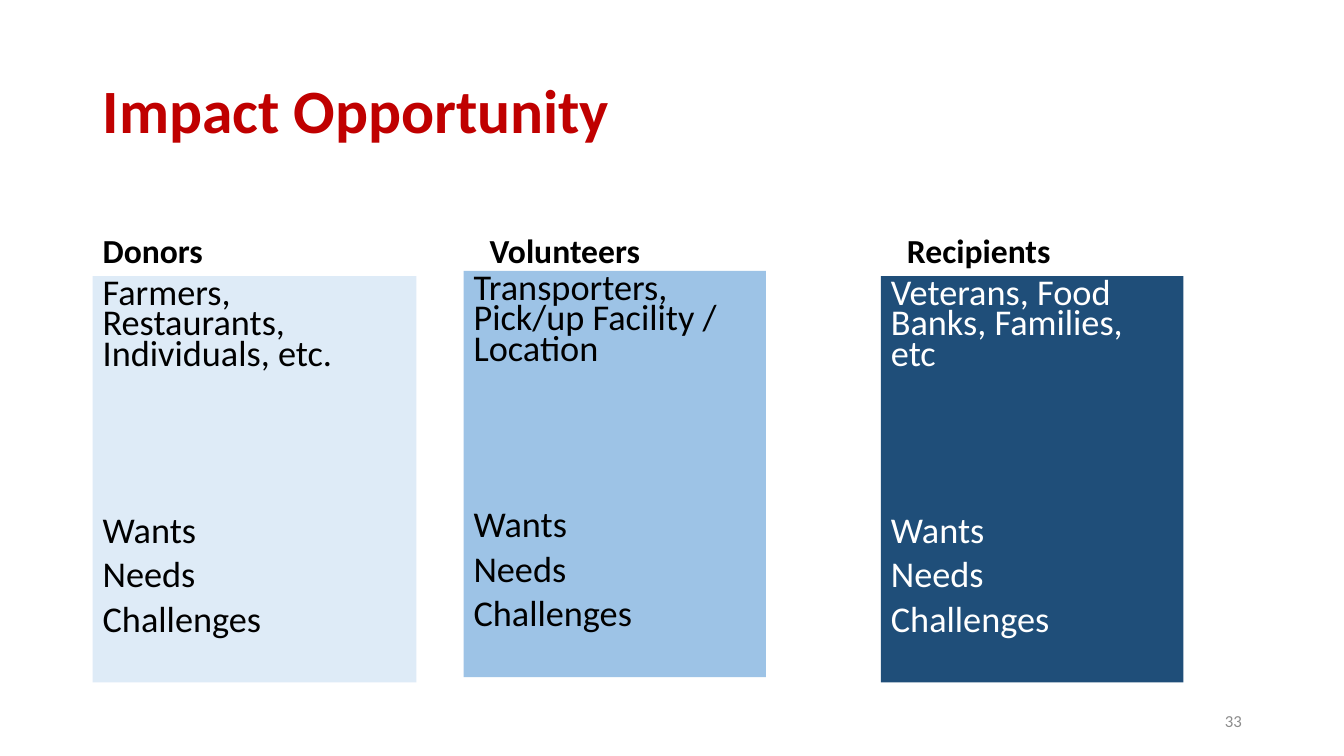
from pptx import Presentation
from pptx.dml.color import RGBColor
from pptx.enum.shapes import MSO_SHAPE
from pptx.enum.text import MSO_ANCHOR, PP_ALIGN
from pptx.util import Pt

RECT = MSO_SHAPE.RECTANGLE
TOP, MID, LOW = MSO_ANCHOR.TOP, MSO_ANCHOR.MIDDLE, MSO_ANCHOR.BOTTOM
LEFT, RIGHT = PP_ALIGN.LEFT, PP_ALIGN.RIGHT

TITLE = "Impact Opportunity"
PAGE = "33"
TOPICS = ["Wants", "Needs", "Challenges"]
GROUPS = [
    dict(name="Donors", who="Farmers, Restaurants, Individuals, etc.",
         left=66.24, top=197.3, width=231.1, inset=0, fill="pale", ink="black"),
    dict(name="Volunteers", who="Transporters, Pick/up Facility / Location",
         left=331.2, top=193.5, width=216, inset=11.5, fill="sky", ink="black"),
    dict(name="Recipients", who="Veterans, Food Banks, Families, etc",
         left=629.3, top=197.3, width=216, inset=11.5, fill="navy", ink="white"),
]

THEME = dict(
    font="Calibri",
    color=dict(red="C00000", black="000000", white="FFFFFF", gray="8C8C8C",
               pale="DEEBF7", sky="9DC3E6", navy="1F4E79"),
    size=dict(title=44, head=24, body=25.9, page=12),
)
HEAD_TOP, HEAD_H, HEAD_W = 132.5, 64.8, 204.5
CARD_H = 290.2
GAP = 10
BREAK = 104.5


def paint(name):
    return RGBColor.from_string(THEME["color"][name])


def write(shape, lines, size, ink="black", bold=False, anchor=TOP,
          align=LEFT, pitch=1.0, gaps=(0,)):
    frame = shape.text_frame
    frame.word_wrap = True
    frame.vertical_anchor = anchor
    for i, (line, gap) in enumerate(zip(lines, gaps)):
        para = frame.paragraphs[0] if i == 0 else frame.add_paragraph()
        para.alignment = align
        para.line_spacing = pitch
        para.space_before = Pt(gap)
        run = para.add_run()
        run.text = line
        font = run.font
        font.name = THEME["font"]
        font.size = Pt(THEME["size"][size])
        font.bold = bold
        font.color.rgb = paint(ink)


def label(slide, box, text, size, **form):
    shape = slide.shapes.add_textbox(*map(Pt, box))
    write(shape, [text], size, **form)


def card(slide, group):
    head = (group["left"] + group["inset"], HEAD_TOP, HEAD_W, HEAD_H)
    label(slide, head, group["name"], "head", bold=True, anchor=LOW,
          pitch=0.9, gaps=[GAP])
    box = (group["left"], group["top"], group["width"], CARD_H)
    shape = slide.shapes.add_shape(RECT, *map(Pt, box))
    shape.shadow.inherit = False
    shape.fill.solid()
    shape.fill.fore_color.rgb = paint(group["fill"])
    shape.line.fill.background()
    write(shape, [group["who"], *TOPICS], "body", ink=group["ink"],
          pitch=0.7, gaps=[GAP, BREAK, GAP, GAP])


def main():
    deck = Presentation()
    deck.slide_width, deck.slide_height = Pt(960), Pt(540)
    slide = deck.slides.add_slide(deck.slide_layouts[6])
    label(slide, (66.24, 28.8, 828, 104.4), TITLE, "title", ink="red",
          bold=True, anchor=MID, pitch=0.9)
    for group in GROUPS:
        card(slide, group)
    label(slide, (678.24, 500.4, 216, 28.8), PAGE, "page", ink="gray",
          anchor=MID, align=RIGHT)
    deck.save("out.pptx")


if __name__ == "__main__":
    main()
